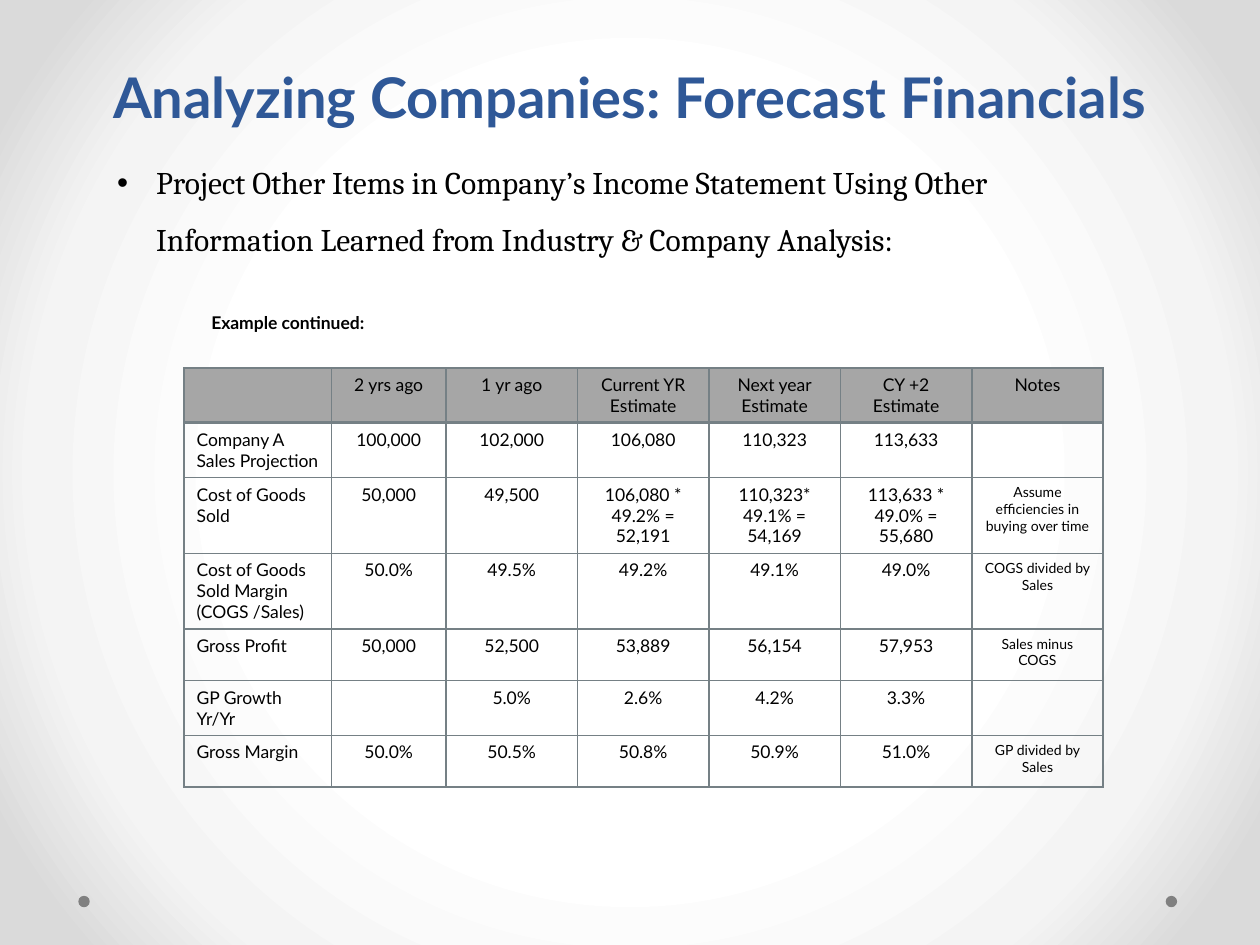
from pptx import Presentation
from pptx.dml.color import RGBColor
from pptx.enum.shapes import MSO_SHAPE
from pptx.enum.text import MSO_ANCHOR, PP_ALIGN
from pptx.oxml import parse_xml
from pptx.oxml.ns import nsdecls
from pptx.util import Cm, Pt

BLACK, BLUE, DOT_GRAY = "000000", "2F5897", "808080"
HEADER_GRAY, BORDER_GRAY = "A6A6A6", "758085"
BACKGROUND_STOPS = [(50, "FFFFFF"), (76, "F4F4F4"), (92, "DADADA")]

COLUMN_WIDTHS = [2.97, 2.31] + [2.65] * 5
ROW_HEIGHT = 1.04
FORECAST = [
    ["", "2 yrs ago", "1 yr ago", "Current YR Estimate", "Next year\nEstimate",
     "CY +2\nEstimate", "Notes"],
    ["Company A Sales Projection", "100,000", "102,000", "106,080", "110,323", "113,633", ""],
    ["Cost of Goods Sold", "50,000", "49,500", "106,080 * 49.2% = 52,191",
     "110,323* 49.1% = 54,169", "113,633 * 49.0% = 55,680",
     "Assume efficiencies in buying over time"],
    ["Cost of Goods Sold Margin (COGS /Sales)", "50.0%", "49.5%", "49.2%", "49.1%", "49.0%",
     "COGS divided by Sales"],
    ["Gross Profit", "50,000", "52,500", "53,889", "56,154", "57,953", "Sales minus COGS"],
    ["GP Growth Yr/Yr", "", "5.0%", "2.6%", "4.2%", "3.3%", ""],
    ["Gross Margin", "50.0%", "50.5%", "50.8%", "50.9%", "51.0%", "GP divided by Sales"],
]


def color(hex_string):
    return RGBColor.from_string(hex_string)


def write_text(text_frame, text, font="Lato", size=10, fill=BLACK, bold=False,
               align=PP_ALIGN.LEFT, line_spacing=None):
    """Fill the frame with one paragraph for each line of the text."""
    for index, line in enumerate(text.split("\n")):
        paragraph = text_frame.add_paragraph() if index else text_frame.paragraphs[0]
        paragraph.alignment = align
        paragraph.line_spacing = line_spacing
        run = paragraph.add_run()
        run.text = line
        run.font.name = font
        run.font.size = Pt(size)
        run.font.bold = bold
        run.font.color.rgb = color(fill)


def add_text(slide, box, text, anchor=MSO_ANCHOR.TOP, **text_format):
    text_frame = slide.shapes.add_textbox(*map(Cm, box)).text_frame
    text_frame.word_wrap = True
    text_frame.vertical_anchor = anchor
    write_text(text_frame, text, **text_format)
    return text_frame


def set_radial_background(slide):
    stops = "".join(
        f'<a:gs pos="{position * 1000}"><a:srgbClr val="{value}"/></a:gs>'
        for position, value in BACKGROUND_STOPS)
    slide.element.cSld.insert(0, parse_xml(
        f'<p:bg {nsdecls("p", "a")}><p:bgPr><a:gradFill rotWithShape="1">'
        f'<a:gsLst>{stops}</a:gsLst><a:path path="circle">'
        '<a:fillToRect l="50000" t="50000" r="50000" b="50000"/></a:path>'
        '</a:gradFill><a:effectLst/></p:bgPr></p:bg>'))


def add_corner_dots(slide, box):
    """Put one dot at each end of the box, as wide as the box is high."""
    left, top, width, size = box
    for dot_left in (left, left + width - size):
        dot = slide.shapes.add_shape(
            MSO_SHAPE.OVAL, Cm(dot_left), Cm(top), Cm(size), Cm(size))
        dot.shadow.inherit = False
        dot.fill.solid()
        dot.fill.fore_color.rgb = color(DOT_GRAY)
        dot.line.fill.background()


def add_bullet(slide, box, text):
    text_frame = add_text(slide, box, text, font="Cambria", size=18, line_spacing=1.5)
    properties = text_frame.paragraphs[0]._p.get_or_add_pPr()
    properties.set("marL", str(Cm(0.79)))
    properties.set("indent", str(-Cm(0.79)))
    for bullet in ('<a:buFont {} typeface="Arial"/>', '<a:buChar {} char="•"/>'):
        properties.append(parse_xml(bullet.format(nsdecls("a"))))


def set_borders(cell, **widths):
    """Draw the sides L, R, T and B, in that order, with widths in points."""
    properties = cell._tc.get_or_add_tcPr()
    for index, (side, width) in enumerate(widths.items()):
        properties.insert(index, parse_xml(
            f'<a:ln{side} {nsdecls("a")} w="{Pt(width)}"><a:solidFill>'
            f'<a:srgbClr val="{BORDER_GRAY}"/></a:solidFill></a:ln{side}>'))


def add_forecast_table(slide, left, top):
    last_column = len(COLUMN_WIDTHS) - 1
    table = slide.shapes.add_table(
        len(FORECAST), len(COLUMN_WIDTHS), Cm(left), Cm(top),
        Cm(sum(COLUMN_WIDTHS)), Cm(ROW_HEIGHT * len(FORECAST))).table
    table.first_row = table.horz_banding = False
    for column, width in zip(table.columns, COLUMN_WIDTHS):
        column.width = Cm(width)
    for row_index, values in enumerate(FORECAST):
        table.rows[row_index].height = Cm(ROW_HEIGHT)
        is_header = row_index == 0
        for column_index, text in enumerate(values):
            cell = table.cell(row_index, column_index)
            is_note = column_index == last_column and not is_header
            write_text(cell.text_frame, text, size=8 if is_note else 10,
                       align=PP_ALIGN.CENTER if column_index else PP_ALIGN.LEFT)
            if is_header:
                cell.fill.solid()
                cell.fill.fore_color.rgb = color(HEADER_GRAY)
            else:
                cell.fill.background()
            set_borders(cell, L=1, R=1, T=2 if row_index == 1 else 1,
                        B=2 if is_header else 1)


def main():
    presentation = Presentation()
    presentation.slide_width, presentation.slide_height = Cm(25.4), Cm(19.05)
    slide = presentation.slides.add_slide(presentation.slide_layouts[6])
    set_radial_background(slide)
    add_corner_dots(slide, (1.58, 18.06, 22.15, 0.23))
    add_text(slide, (1.27, 0, 22.86, 2.74), "Analyzing Companies: Forecast Financials",
             anchor=MSO_ANCHOR.BOTTOM, size=32, fill=BLUE, bold=True,
             align=PP_ALIGN.CENTER, line_spacing=Pt(58))
    add_bullet(slide, (2.11, 2.79, 20.12, 3.61),
               "Project Other Items in Company’s Income Statement Using Other "
               "Information Learned from Industry & Company Analysis:")
    add_forecast_table(slide, 3.71, 7.42)
    add_text(slide, (4.01, 6.17, 12.7, 0.69), "Example continued:", bold=True)
    presentation.save("out.pptx")


if __name__ == "__main__":
    main()
